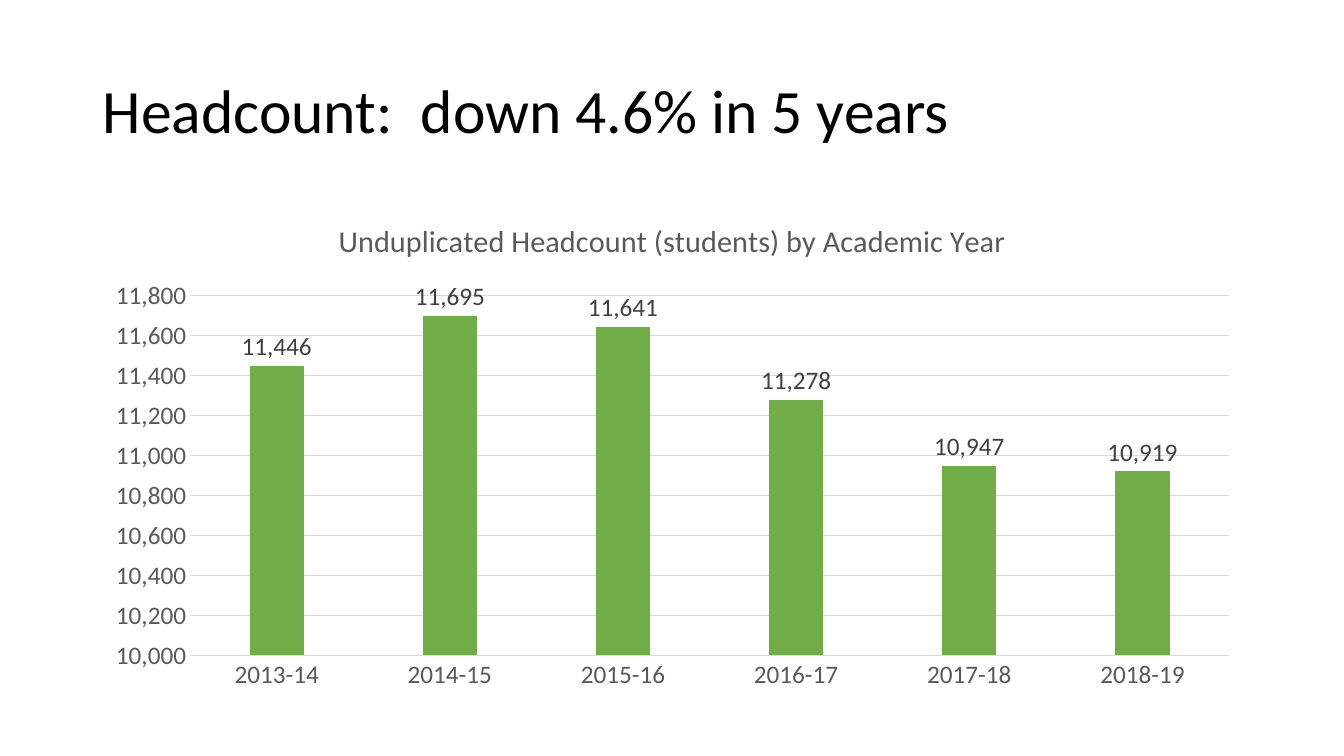
import pptx
import pptx.chart.data
import pptx.dml.color
import pptx.enum.chart
import pptx.enum.text
import pptx.util
from pptx.util import Inches

TITLE = "Headcount:  down 4.6% in 5 years"
CHART_TITLE = "Unduplicated Headcount (students) by Academic Year"
HEADCOUNTS = {
    "2013-14": 11446,
    "2014-15": 11695,
    "2015-16": 11641,
    "2016-17": 11278,
    "2017-18": 10947,
    "2018-19": 10919,
}
NUMBER_FORMAT = "#,##0"
AXIS_MINIMUM, AXIS_MAXIMUM, AXIS_STEP = 10000, 11800, 200

THEME = {
    "font": "Calibri",
    "title": (44, "000000"),
    "chart_title": (21.6, "595959"),
    "axis": (18, "595959"),
    "label": (18, "404040"),
    "bar": "70AD47",
    "grid": "D9D9D9",
}

LEFT, WIDTH = 0.92, 11.5
TITLE_TOP, TITLE_HEIGHT = 0.4, 1.45
CHART_TOP, CHART_HEIGHT = 1.97, 4.97


def color(name):
    return pptx.dml.color.RGBColor.from_string(name)


def style_font(font, role):
    size, font_color = THEME[role]
    font.name = THEME["font"]
    font.size = pptx.util.Pt(size)
    font.bold = False
    font.color.rgb = color(font_color)


def style_line(line):
    line.color.rgb = color(THEME["grid"])
    line.width = pptx.util.Pt(0.75)


def add_title(slide):
    shape = slide.shapes.add_textbox(
        Inches(LEFT), Inches(TITLE_TOP), Inches(WIDTH), Inches(TITLE_HEIGHT))
    frame = shape.text_frame
    frame.word_wrap = True
    frame.vertical_anchor = pptx.enum.text.MSO_ANCHOR.MIDDLE
    paragraph = frame.paragraphs[0]
    paragraph.line_spacing = 0.9
    run = paragraph.add_run()
    run.text = TITLE
    style_font(run.font, "title")


def style_axes(chart):
    for axis in (chart.category_axis, chart.value_axis):
        axis.major_tick_mark = pptx.enum.chart.XL_TICK_MARK.NONE
        axis.minor_tick_mark = pptx.enum.chart.XL_TICK_MARK.NONE
        style_font(axis.tick_labels.font, "axis")
    style_line(chart.category_axis.format.line)

    value_axis = chart.value_axis
    value_axis.minimum_scale = AXIS_MINIMUM
    value_axis.maximum_scale = AXIS_MAXIMUM
    value_axis.major_unit = AXIS_STEP
    value_axis.format.line.fill.background()
    value_axis.tick_labels.number_format = NUMBER_FORMAT
    value_axis.tick_labels.number_format_is_linked = False
    style_line(value_axis.major_gridlines.format.line)


def style_bars(chart):
    plot = chart.plots[0]
    plot.gap_width = 219
    plot.overlap = -27
    plot.vary_by_categories = False
    series = plot.series[0]
    series.format.fill.solid()
    series.format.fill.fore_color.rgb = color(THEME["bar"])
    labels = series.data_labels
    labels.show_value = True
    labels.position = pptx.enum.chart.XL_LABEL_POSITION.OUTSIDE_END
    labels.number_format = NUMBER_FORMAT
    labels.number_format_is_linked = False
    style_font(labels.font, "label")


def add_headcount_chart(slide):
    data = pptx.chart.data.CategoryChartData(number_format=NUMBER_FORMAT)
    data.categories = list(HEADCOUNTS)
    data.add_series("Series 1", list(HEADCOUNTS.values()))
    chart = slide.shapes.add_chart(
        pptx.enum.chart.XL_CHART_TYPE.COLUMN_CLUSTERED,
        Inches(LEFT), Inches(CHART_TOP), Inches(WIDTH), Inches(CHART_HEIGHT),
        data).chart
    chart.has_legend = False
    style_font(chart.font, "axis")
    chart.has_title = True
    chart.chart_title.include_in_layout = False
    run = chart.chart_title.text_frame.paragraphs[0].add_run()
    run.text = CHART_TITLE
    style_font(run.font, "chart_title")
    style_axes(chart)
    style_bars(chart)


def main():
    presentation = pptx.Presentation()
    presentation.slide_width = Inches(13.33)
    presentation.slide_height = Inches(7.5)
    slide = presentation.slides.add_slide(presentation.slide_layouts[6])
    add_headcount_chart(slide)
    add_title(slide)
    presentation.save("out.pptx")


if __name__ == "__main__":
    main()
